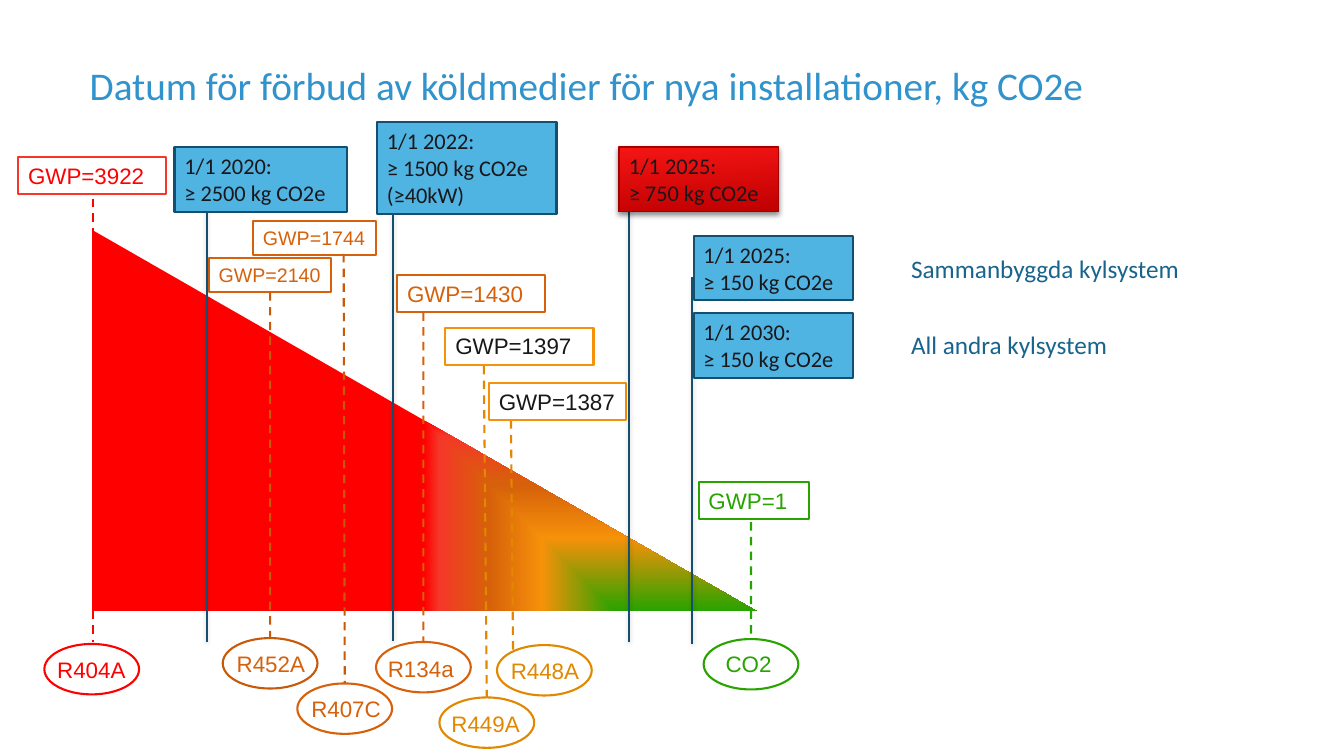
from pptx import Presentation
from pptx.dml.color import RGBColor
from pptx.enum.dml import MSO_LINE
from pptx.enum.shapes import MSO_CONNECTOR, MSO_SHAPE
from pptx.enum.text import MSO_ANCHOR, MSO_AUTO_SIZE, PP_ALIGN
from pptx.oxml import parse_xml
from pptx.oxml.ns import qn
from pptx.util import Pt

RECT, OVAL, TRIANGLE = MSO_SHAPE.RECTANGLE, MSO_SHAPE.OVAL, MSO_SHAPE.RIGHT_TRIANGLE
STRAIGHT, DASH = MSO_CONNECTOR.STRAIGHT, MSO_LINE.DASH
LEFT, TOP, MIDDLE = PP_ALIGN.LEFT, MSO_ANCHOR.TOP, MSO_ANCHOR.MIDDLE
FIT, FIXED = MSO_AUTO_SIZE.SHAPE_TO_FIT_TEXT, MSO_AUTO_SIZE.NONE
NS = 'xmlns:a="http://schemas.openxmlformats.org/drawingml/2006/main"'

COLORS = {
    "title": "3093CC", "note": "19648D", "ink": "1A171B", "white": "FFFFFF",
    "navy": "144F70", "sky": "4FB4E2", "red": "FF0000", "coral": "F43728",
    "rust": "D6610A", "brown": "C75A09", "orange": "F6910A", "amber": "E18800",
    "green": "28A300", "bright": "F51515", "dark": "C00000", "edge": "A50000",
}
RGB = {name: RGBColor.from_string(value) for name, value in COLORS.items()}


def write(s, lines, size, font, color, anchor=TOP, fit=FIT):
    tf = s.text_frame
    tf.text = "\n".join(lines)
    for key, value in {"word_wrap": True, "auto_size": fit, "vertical_anchor": anchor}.items():
        setattr(tf, key, value)
    for p in tf.paragraphs:
        p.alignment = LEFT
        for key, value in {"size": Pt(size), "name": font}.items():
            setattr(p.font, key, value)
        p.font.color.rgb = RGB[color]


def outline(s, color, width=1.5, shadow=None):
    if color:
        s.line.color.rgb = RGB[color]
        s.line.width = Pt(width)
    else:
        s.line.fill.background()
    inner = ""
    if shadow:
        alpha, blur, dist = shadow
        inner = (f'<a:outerShdw blurRad="{Pt(blur)}" dist="{Pt(dist)}" dir="5400000" rotWithShape="0">'
                 f'<a:srgbClr val="000000"><a:alpha val="{alpha * 1000}"/></a:srgbClr></a:outerShdw>')
    s._element.spPr.append(parse_xml(f"<a:effectLst {NS}>{inner}</a:effectLst>"))


prs = Presentation()
prs.slide_width, prs.slide_height = Pt(960), Pt(540)
slide = prs.slides.add_slide(prs.slide_layouts[5])
shapes = slide.shapes

title = shapes.title
for key, value in {"left": 56.9, "top": 21.6, "width": 846.7, "height": 78.5}.items():
    setattr(title, key, Pt(value))
write(title, ["Datum för förbud av köldmedier för nya installationer, kg CO2e"],
      28, "Calibri", "title", MIDDLE, FIXED)

wedge = shapes.add_shape(TRIANGLE, Pt(65.8), Pt(164.2), Pt(474.5), Pt(272.2))
stops = [(0, "green"), (38, "orange"), (66, "rust"), (92, "coral"), (100, "red")]
gs = "".join(f'<a:gs pos="{pos * 1000}"><a:srgbClr val="{COLORS[c]}"/></a:gs>' for pos, c in stops)
wedge.fill.background()
spPr = wedge._element.spPr
spPr.replace(spPr.find(qn("a:noFill")), parse_xml(
    f'<a:gradFill {NS} rotWithShape="1"><a:gsLst>{gs}</a:gsLst>'
    '<a:path path="rect"><a:fillToRect l="100000" t="100000"/></a:path></a:gradFill>'))
outline(wedge, None)

# name, text colour, outline, dash, oval, label, GWP, GWP box, size, text, edge, fill, line, joins
REFRIGERANTS = [
    ("R134a", "rust", "rust", (268.6, 458.6), (270, 464.4), 1430, (283.7, 196.6, 105.8), 16,
     "rust", "rust", None, (302.4, 223.2, 302.4, 458.6), "oval"),
    ("R404A", "red", "red", (31.7, 460), (33.8, 465), 3922, (13, 112.3, 105.8), 16,
     "red", "coral", None, (66.2, 141.8, 66.2, 458.6), ""),
    ("CO2", "green", "green", (502.6, 456.5), (511.2, 460.8), 1, (499, 344.2, 79.2), 16,
     "green", "green", None, (536.4, 373, 536.4, 456.5), "oval"),
    ("R407C", "rust", "brown", (212.4, 488.2), (215.3, 493.2), 1744, (180.7, 157.7, 87.8), 14,
     "rust", "rust", None, (245.5, 181.4, 246.2, 488.2), "oval"),
    ("R448A", "amber", "amber", (355, 460.8), (357.8, 465.8), 1387, (349.2, 273.6, 97.9), 16,
     "ink", "orange", "white", (365, 300.2, 366.5, 467.3), ""),
    ("R449A", "amber", "amber", (313.9, 498.2), (315.4, 504), 1397, (318.2, 234, 105.8), 16,
     "ink", "orange", "white", (345.6, 261.4, 347.8, 498.2), "oval"),
    ("R452A", "rust", "brown", (159.1, 455.8), (162, 460.8), 2140, (149, 184.3, 87.8), 14,
     "rust", "rust", None, (193, 208.8, 193, 455.8), "box oval"),
]
for (name, color, dash, oval_at, label_at, gwp, (x, y, w), size,
     ink, edge, fill, ends, joins) in REFRIGERANTS:
    line = shapes.add_connector(STRAIGHT, *map(Pt, ends))
    outline(line, dash)
    line.line.dash_style = DASH

    oval = shapes.add_shape(OVAL, *map(Pt, oval_at), Pt(67.7), Pt(36))
    oval.fill.background()
    if name == "R449A":
        oval.fill.solid()
        oval.fill.fore_color.rgb = RGB["white"]
    outline(oval, dash if name == "R452A" else color)

    label = shapes.add_textbox(*map(Pt, label_at), Pt(67.7), Pt(26.6))
    write(label, [name], 16, "Arial", color)

    box = shapes.add_shape(RECT, Pt(x), Pt(y), Pt(w), Pt(26.6 if size == 16 else 24.5))
    box.fill.background()
    if fill:
        box.fill.solid()
        box.fill.fore_color.rgb = RGB[fill]
    outline(box, edge)
    write(box, [f"GWP={gwp}"], size, "Arial", ink)

    if "box" in joins:
        line.begin_connect(box, 2)
    if "oval" in joins:
        line.end_connect(oval, 0)

BANS = [
    ("1/1 2020:", "≥ 2500 kg CO2e", (124.6, 105.1, 123.1, 46.1), (147.6, 133.9, 458.6)),
    ("1/1 2025:", "≥ 750 kg CO2e", (442.1, 105.1, 113.8, 46.1), (449.3, 133.9, 458.6)),
    ("1/1 2022:", "≥ 1500 kg CO2e (≥40kW)", (269.3, 87.1, 128.2, 65.5), (280.8, 153.4, 457.9)),
    ("1/1 2025:", "≥ 150 kg CO2e", (495.4, 168.5, 113.8, 46.1), (494.6, 198, 460.1)),
    ("1/1 2030:", "≥ 150 kg CO2e", (495.4, 223.9, 113.8, 46.1), None),
]
for date, limit, area, drop in BANS:
    if drop:
        x, y1, y2 = map(Pt, drop)
        line = shapes.add_connector(STRAIGHT, x, y1, x, y2)
        outline(line, "navy", shadow=(15, 3, 1))
    box = shapes.add_shape(RECT, *map(Pt, area))
    if limit == "≥ 750 kg CO2e":
        box.fill.gradient()
        box.fill.gradient_angle = 274
        for stop, pos, color in zip(box.fill.gradient_stops, (0, 1), ("bright", "dark")):
            stop.position = pos
            stop.color.rgb = RGB[color]
        outline(box, "edge", 1, (46, 4, 2))
    else:
        box.fill.solid()
        box.fill.fore_color.rgb = RGB["sky"]
        outline(box, "navy")
    write(box, [date, limit], 16, "Calibri", "ink")

for text, y, w in [("Sammanbyggda kylsystem", 177.1, 231.8), ("All andra kylsystem", 231.8, 188.6)]:
    note = shapes.add_textbox(Pt(643.7), Pt(y), Pt(w), Pt(28.8))
    write(note, [text], 18, "Calibri", "note")

prs.save("out.pptx")
